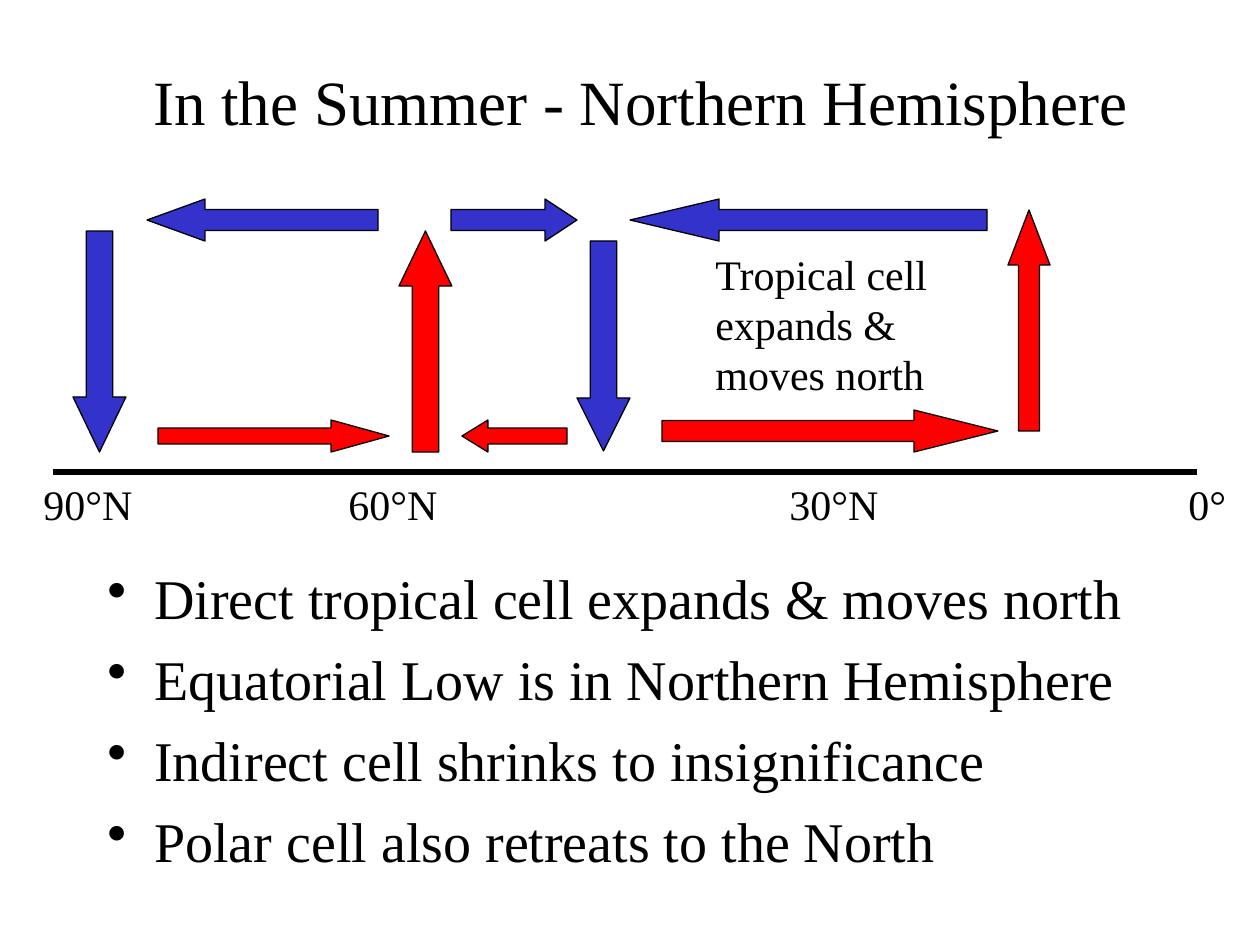
from lxml import etree
from pptx import Presentation
from pptx.dml.color import RGBColor
from pptx.enum.shapes import MSO_CONNECTOR, MSO_SHAPE
from pptx.enum.text import MSO_ANCHOR, MSO_AUTO_SIZE, PP_ALIGN
from pptx.oxml.ns import qn
from pptx.util import Pt

UP, DOWN = MSO_SHAPE.UP_ARROW, MSO_SHAPE.DOWN_ARROW
LEFT, RIGHT = MSO_SHAPE.LEFT_ARROW, MSO_SHAPE.RIGHT_ARROW
STRAIGHT = MSO_CONNECTOR.STRAIGHT
MIDDLE, TOP = MSO_ANCHOR.MIDDLE, MSO_ANCHOR.TOP
CENTER, ALIGN_LEFT = PP_ALIGN.CENTER, PP_ALIGN.LEFT
NO_FIT = MSO_AUTO_SIZE.NONE

FONT = "Times New Roman"
COLORS = {"ink": "000000", "cold": "3333CC", "warm": "FF0000"}

TITLE = "In the Summer - Northern Hemisphere"
TITLE_BOX = (105, 21, 1071, 158)
GROUND = (53, 1197, 472)
LATITUDES = [("90°N", 31, 115), ("60°N", 336, 115), ("30°N", 777, 115), ("0°", 1176, 63)]
LATITUDE_HEIGHT = 63
CELL_NOTE = ["Tropical cell", "expands &", "moves north"]
CELL_NOTE_BOX = (703, 242, 238, 164)
FINDINGS = [
    "Direct tropical cell expands & moves north",
    "Equatorial Low is in Northern Hemisphere",
    "Indirect cell shrinks to insignificance",
    "Polar cell also retreats to the North",
]
FINDINGS_BOX = (95, 557, 1071, 347)
FINDINGS_INDENT = 47

# direction, colour, left, top, width, height, head length
AIR_FLOWS = [
    (DOWN, "cold", 73, 231, 53, 221, 55),
    (DOWN, "cold", 577, 241, 53, 210, 53),
    (UP, "warm", 1008, 210, 42, 221, 55),
    (UP, "warm", 399, 231, 53, 221, 55),
    (LEFT, "cold", 630, 199, 357, 42, 89),
    (RIGHT, "cold", 451, 199, 126, 42, 32),
    (LEFT, "cold", 147, 199, 231, 42, 58),
    (RIGHT, "warm", 158, 420, 231, 32, 58),
    (LEFT, "warm", 462, 420, 105, 32, 26),
    (RIGHT, "warm", 662, 410, 336, 42, 84),
]


def px(length):
    return round(length * 914400 / 126)


def color(name):
    return RGBColor.from_string(COLORS[name])


def apply(target, formats):
    for name, value in formats.items():
        setattr(target, name, value)


def write(frame, lines, size, frame_format, paragraph_format):
    apply(frame, {"auto_size": NO_FIT, **frame_format})
    frame.text = "\n".join(lines)
    for paragraph in frame.paragraphs:
        apply(paragraph, paragraph_format)
        apply(paragraph.font, {"name": FONT, "size": Pt(size)})
        paragraph.font.color.rgb = color("ink")


def add_text(slide, box, lines, size, wrap=False, **paragraph_format):
    frame = slide.shapes.add_textbox(*map(px, box)).text_frame
    write(frame, lines, size, {"word_wrap": wrap, "vertical_anchor": TOP},
          {"alignment": ALIGN_LEFT, **paragraph_format})
    return frame


def add_bullets(frame, indent):
    for paragraph in frame.paragraphs:
        properties = paragraph._p.get_or_add_pPr()
        properties.set("marL", str(px(indent)))
        properties.set("indent", str(-px(indent)))
        etree.SubElement(properties, qn("a:buChar")).set("char", "•")


def add_ground(slide, left, right, y):
    ground = slide.shapes.add_connector(STRAIGHT, px(left), px(y), px(right), px(y))
    ground.line.color.rgb = color("ink")
    ground.line.width = Pt(3)
    etree.SubElement(ground._element.spPr, qn("a:effectLst"))


def add_air_flow(slide, direction, tint, left, top, width, height, head):
    flow = slide.shapes.add_shape(direction, *map(px, (left, top, width, height)))
    flow.adjustments[0] = 0.5
    flow.adjustments[1] = round(head / min(width, height), 2)
    flow.shadow.inherit = False
    flow.fill.solid()
    flow.fill.fore_color.rgb = color(tint)
    flow.line.color.rgb = color("ink")
    flow.line.width = Pt(0.75)


def main():
    deck = Presentation()
    apply(deck, {"slide_width": px(1260), "slide_height": px(945)})
    slide = deck.slides.add_slide(deck.slide_layouts[5])

    title = slide.shapes.title
    apply(title, dict(zip(("left", "top", "width", "height"), map(px, TITLE_BOX))))
    write(title.text_frame, [TITLE], 36, {"vertical_anchor": MIDDLE}, {"alignment": CENTER})

    add_ground(slide, *GROUND)
    for latitude, left, width in LATITUDES:
        add_text(slide, (left, GROUND[2], width, LATITUDE_HEIGHT), [latitude], 24)
    for flow in AIR_FLOWS:
        add_air_flow(slide, *flow)
    add_text(slide, CELL_NOTE_BOX, CELL_NOTE, 24)
    findings = add_text(slide, FINDINGS_BOX, FINDINGS, 32, wrap=True, space_before=Pt(8))
    add_bullets(findings, FINDINGS_INDENT)

    deck.save("out.pptx")


if __name__ == "__main__":
    main()
